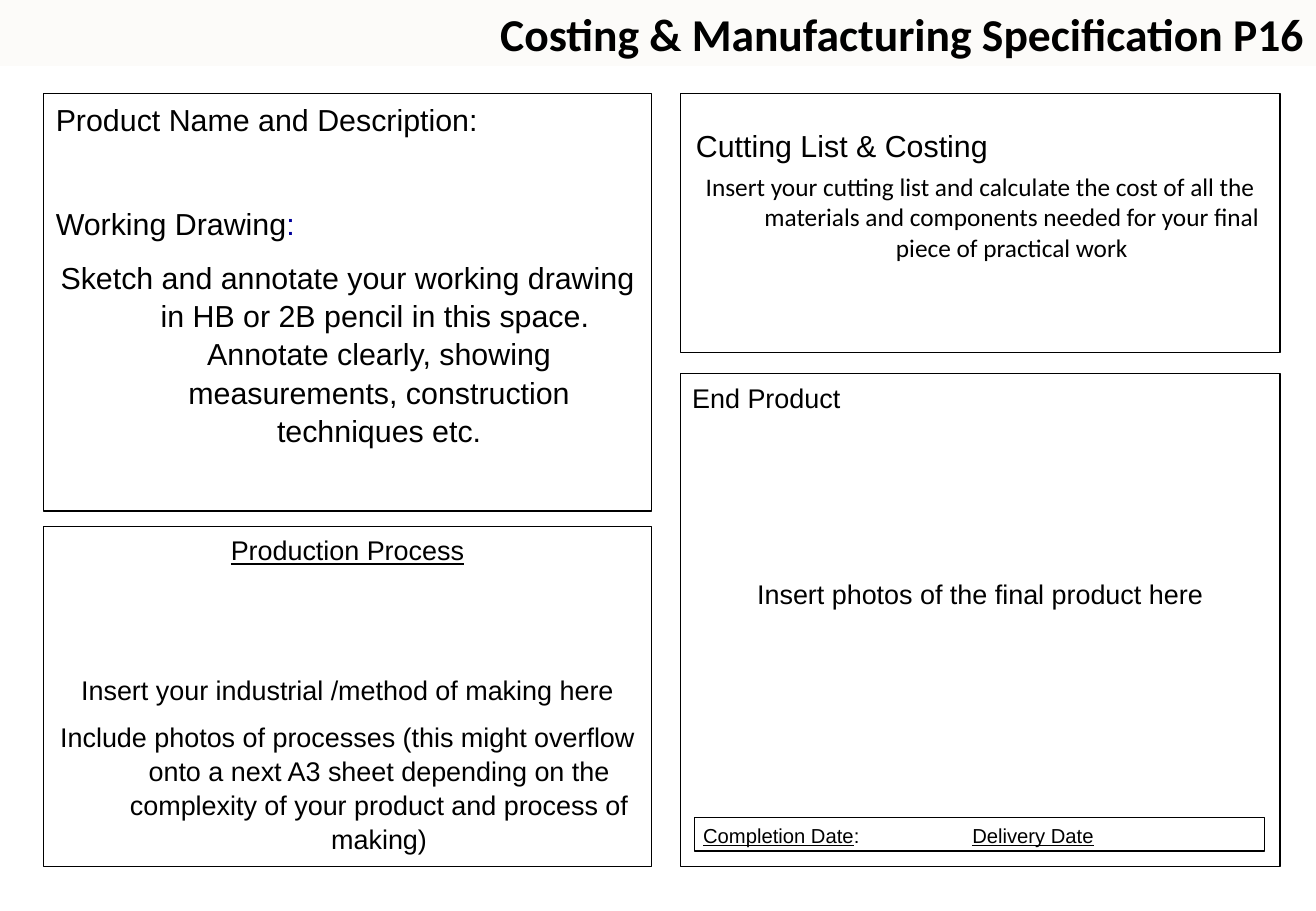
from pptx import Presentation
from pptx.util import Pt
from pptx.dml.color import RGBColor
from pptx.enum.shapes import MSO_SHAPE
from pptx.enum.text import MSO_ANCHOR, PP_ALIGN
from lxml.etree import SubElement
from pptx.oxml.ns import qn

COLORS = {"text": "000000", "band": "FCFBF9", "colon": "000099"}
LEFT, CENTER = PP_ALIGN.LEFT, PP_ALIGN.CENTER
HANGING = 37.5


def color(name):
    return RGBColor.from_string(COLORS[name])


def add_box(left, top, width, height, paragraphs, inset=(7.2, 3.6), hanging=HANGING,
            outlined=True, font_name="Arial", line_spacing=1.05, margin_top=None):
    """Add a box; each paragraph is (text, size, alignment, space before)."""
    place = Pt(left), Pt(top), Pt(width), Pt(height)
    if outlined:
        shape = slide.shapes.add_shape(MSO_SHAPE.RECTANGLE, *place)
        shape.shadow.inherit = False
        shape.fill.background()
        shape.line.color.rgb = color("text")
        shape.line.width = Pt(0.75)
    else:
        shape = slide.shapes.add_textbox(*place)
    frame = shape.text_frame
    frame.word_wrap = True
    frame.vertical_anchor = MSO_ANCHOR.TOP
    frame.margin_left = frame.margin_right = Pt(inset[0])
    frame.margin_top = Pt(inset[1] if margin_top is None else margin_top)
    frame.margin_bottom = Pt(inset[1])
    for index, (text, size, alignment, space) in enumerate(paragraphs):
        paragraph = frame.add_paragraph() if index else frame.paragraphs[0]
        paragraph.add_run().text = text
        paragraph.alignment = alignment
        paragraph.space_before = Pt(space)
        paragraph.line_spacing = line_spacing
        paragraph.font.name = font_name
        paragraph.font.size = Pt(size)
        paragraph.font.color.rgb = color("text")
        if hanging:
            properties = paragraph._p.get_or_add_pPr()
            properties.set("marL", str(Pt(hanging)))
            properties.set("indent", str(-Pt(hanging)))
    return frame.paragraphs


presentation = Presentation()
presentation.slide_width, presentation.slide_height = Pt(780), Pt(540)
slide = presentation.slides.add_slide(presentation.slide_layouts[5])

# Title band
title = slide.shapes.title
title.left, title.top, title.width, title.height = Pt(0), Pt(0), Pt(780), Pt(39)
title.fill.solid()
title.fill.fore_color.rgb = color("band")
title.text_frame.text = "Costing & Manufacturing Specification P16"
title.text_frame.vertical_anchor = MSO_ANCHOR.MIDDLE
heading = title.text_frame.paragraphs[0]
heading.alignment = PP_ALIGN.RIGHT
heading.font.name = "Calibri"
heading.font.size = Pt(27)
heading.font.bold = True
heading.font.color.rgb = color("text")

# Left column: working drawing and production process
drawing = add_box(26, 55.5, 360, 247.5, [
    ("Product Name and Description:", 18, LEFT, 0),
    ("Working Drawing", 18, LEFT, 39),
    ("Sketch and annotate your working drawing in HB or 2B pencil in this space.  "
     "Annotate clearly, showing measurements, construction techniques etc.", 18, CENTER, 9),
])
colon = drawing[1].add_run()
colon.text = ":"
colon.font.color.rgb = color("colon")

process = add_box(26, 312, 360, 201.5, [
    ("Production Process", 16, CENTER, 0),
    ("Insert your industrial /method of making here", 16, CENTER, 62.5),
    ("Include photos of processes (this might overflow onto a next A3 sheet depending on "
     "the complexity of your product and process of making)", 16, CENTER, 8),
])
process[0].font.underline = True
process[0].runs[0].font.underline = True

# Right column: cutting list and end product
add_box(403.2, 55.5, 355.5, 153.5, [
    ("Insert your cutting list and calculate the cost of all the materials and components "
     "needed for your final piece of practical work", 15, CENTER, 0),
], font_name="Calibri", line_spacing=1.0, margin_top=46)
add_box(407.5, 71.3, 337.5, 24, [("Cutting List & Costing", 18, LEFT, 0)],
        inset=(5, 2.9), hanging=0, outlined=False)
add_box(403.2, 221.5, 355.5, 292, [
    ("End Product", 16, LEFT, 0),
    ("Insert photos of the final product here", 16, CENTER, 96.5),
])

# Dates, with the second label at a tab stop
dates = add_box(411.8, 484.5, 337.7, 20, [("Completion Date", 12, LEFT, 0)],
                inset=(5, 2.9), hanging=0)[0]
dates.add_run().text = ":\t"
dates.add_run().text = "Delivery Date"
for label in (dates.runs[0], dates.runs[2]):
    label.font.underline = True
properties = dates._p.get_or_add_pPr()
tab_list = SubElement(properties, qn("a:tabLst"))
SubElement(tab_list, qn("a:tab"), pos=str(Pt(159.5)), algn="l")
default_run = properties.find(qn("a:defRPr"))
if default_run is not None:
    default_run.addprevious(tab_list)

presentation.save("out.pptx")
